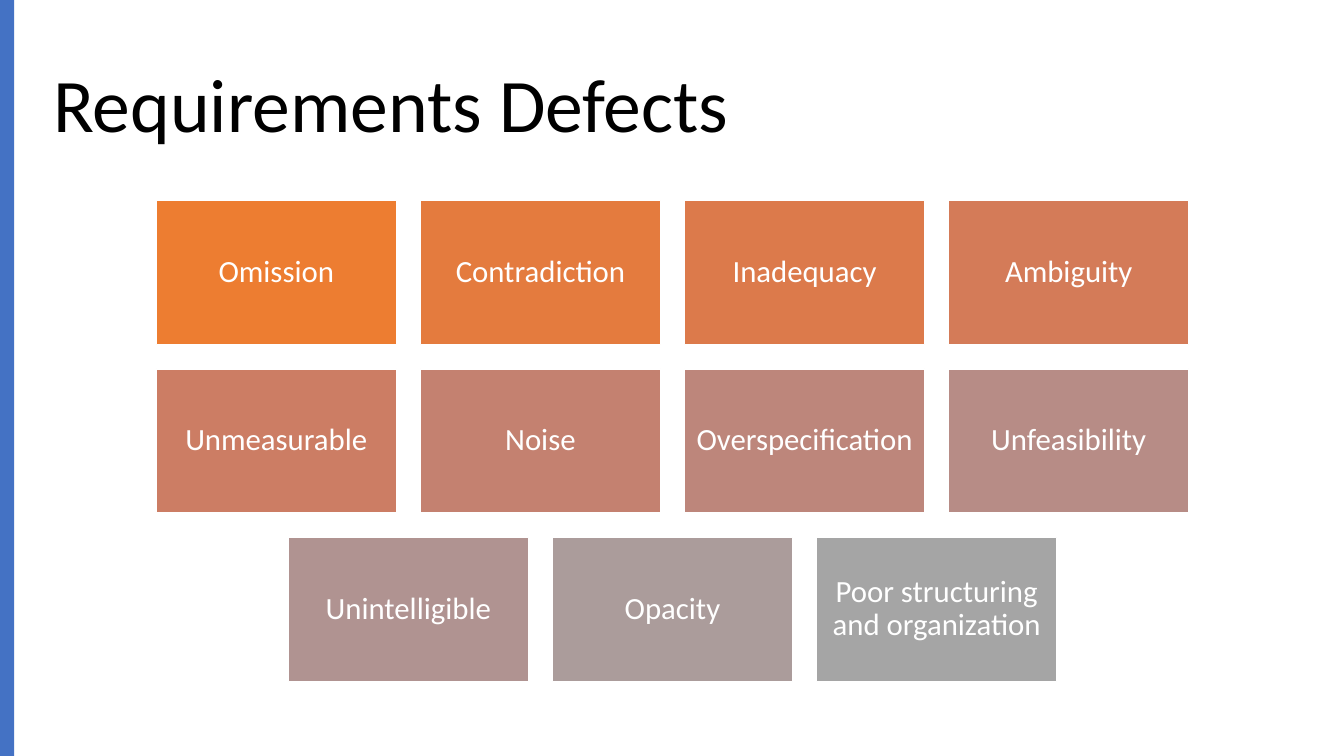
from pptx import Presentation
from pptx.dml.color import RGBColor
from pptx.enum.shapes import MSO_SHAPE
from pptx.enum.text import MSO_ANCHOR, PP_ALIGN
from pptx.util import Inches, Pt

RECTANGLE = MSO_SHAPE.RECTANGLE
MIDDLE = MSO_ANCHOR.MIDDLE
LEFT, CENTER = PP_ALIGN.LEFT, PP_ALIGN.CENTER

DEFECT_ROWS = [
    [("Omission", "ED7D31"), ("Contradiction", "E47B3E"),
     ("Inadequacy", "DC7A4B"), ("Ambiguity", "D47B58")],
    [("Unmeasurable", "CC7D64"), ("Noise", "C48170"),
     ("Overspecification", "BD867B"), ("Unfeasibility", "B78C86")],
    [("Unintelligible", "B09391"), ("Opacity", "AB9C9B"),
     ("Poor structuring and organization", "A5A5A5")],
]
TILE_WIDTH, TILE_HEIGHT, GAP = 2.38, 1.43, 0.24
GRID_CENTER, GRID_TOP = 6.67, 1.99


def color(value):
    return RGBColor.from_string(value)


class DefectSlide:
    font_name = "Calibri"
    white, black, accent = "FFFFFF", "000000", "4472C4"

    def __init__(self, slide):
        self.slide = slide

    def set_text(self, frame, text, size, ink, align):
        frame.word_wrap = True
        frame.vertical_anchor = MIDDLE
        paragraph = frame.paragraphs[0]
        paragraph.text = text
        paragraph.alignment = align
        paragraph.line_spacing = 0.9
        paragraph.font.name = self.font_name
        paragraph.font.size = Pt(size)
        paragraph.font.color.rgb = color(ink)

    def title(self, text, left, top, width, height):
        heading = self.slide.shapes.add_textbox(
            Inches(left), Inches(top), Inches(width), Inches(height))
        self.set_text(heading.text_frame, text, 54, self.black, LEFT)

    def block(self, left, top, width, height, fill):
        rectangle = self.slide.shapes.add_shape(
            RECTANGLE, Inches(left), Inches(top), Inches(width), Inches(height))
        rectangle.shadow.inherit = False
        rectangle.fill.solid()
        rectangle.fill.fore_color.rgb = color(fill)
        rectangle.line.fill.background()
        return rectangle

    def tile(self, text, left, top, fill):
        defect = self.block(left, top, TILE_WIDTH, TILE_HEIGHT, fill)
        defect.line.color.rgb = color(self.white)
        defect.line.width = Pt(1)
        frame = defect.text_frame
        frame.margin_left = frame.margin_right = Inches(0.09)
        frame.margin_top = frame.margin_bottom = Inches(0.09)
        self.set_text(frame, text, 22, self.white, CENTER)


def main():
    deck = Presentation()
    deck.slide_width, deck.slide_height = Inches(13.33), Inches(7.5)
    page = DefectSlide(deck.slides.add_slide(deck.slide_layouts[6]))

    page.title("Requirements Defects", 0.43, 0.35, 12.48, 1.45)
    page.block(0, 0, 0.14, 7.5, page.accent)

    for row, defects in enumerate(DEFECT_ROWS):
        row_width = len(defects) * (TILE_WIDTH + GAP) - GAP
        row_left = GRID_CENTER - row_width / 2
        top = GRID_TOP + row * (TILE_HEIGHT + GAP)
        for column, (defect, fill) in enumerate(defects):
            page.tile(defect, row_left + column * (TILE_WIDTH + GAP), top, fill)

    deck.save("out.pptx")


if __name__ == "__main__":
    main()
